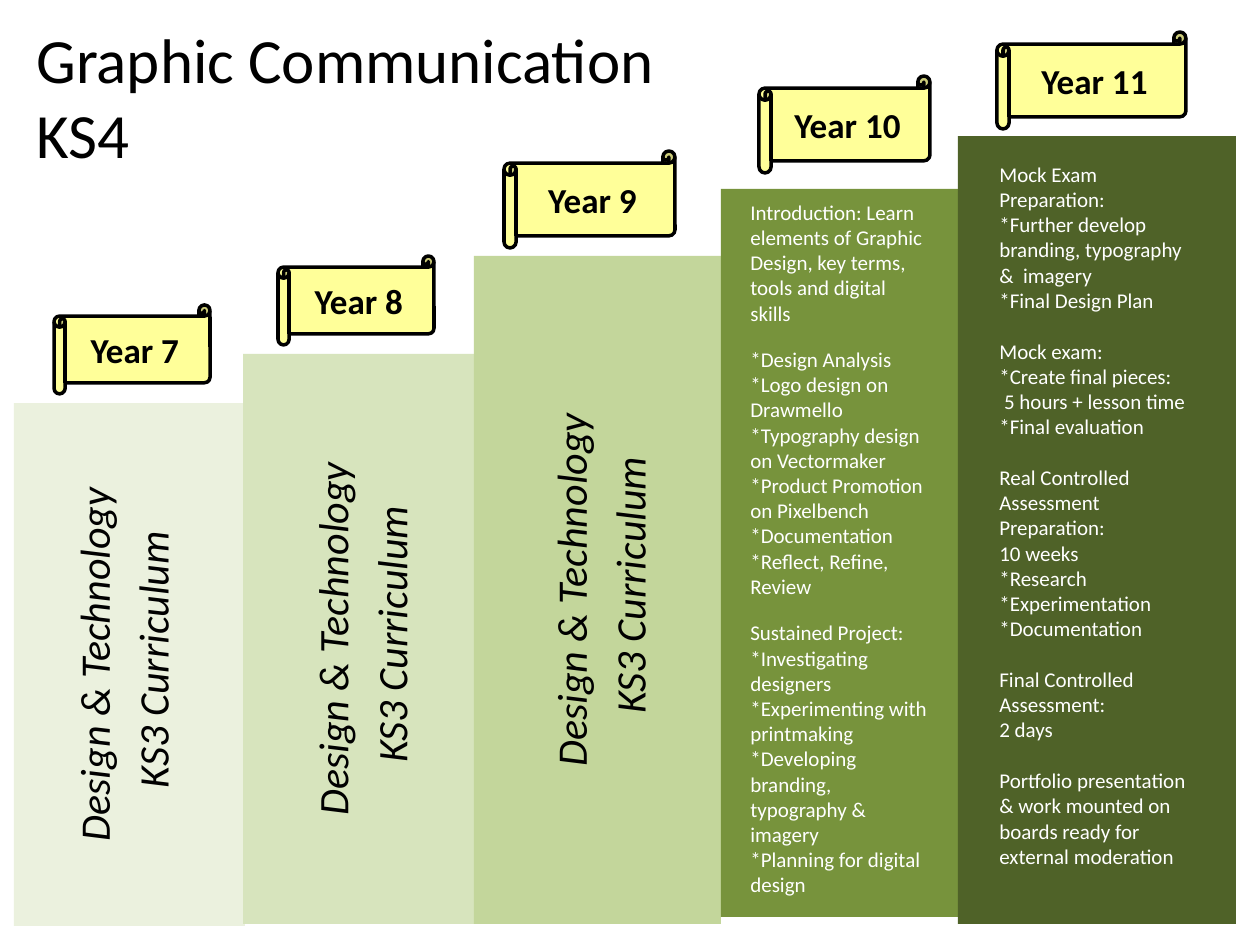
from pptx import Presentation
from pptx.dml.color import RGBColor
from pptx.enum.shapes import MSO_SHAPE
from pptx.enum.text import MSO_ANCHOR, MSO_AUTO_SIZE, PP_ALIGN
from pptx.util import Emu, Pt

RECTANGLE = MSO_SHAPE.RECTANGLE
SCROLL = MSO_SHAPE.HORIZONTAL_SCROLL
MIDDLE = MSO_ANCHOR.MIDDLE
FIT_SHAPE = MSO_AUTO_SIZE.SHAPE_TO_FIT_TEXT
LEFT, CENTER = PP_ALIGN.LEFT, PP_ALIGN.CENTER

PX_PER_INCH = 126
FONT = "Calibri"
COLORS = {
    "black": "000000",
    "white": "FFFFFF",
    "scroll": "FFFF99",
    "year 7": "EBF1DE",
    "year 8": "D7E4BD",
    "year 9": "C3D69B",
    "year 10": "77933C",
    "year 11": "4F6228",
}

KS3_LINES = ["Design & Technology", " KS3 Curriculum"]

YEAR_10_GROUPS = [
    ["Introduction: Learn elements of Graphic Design, key terms, tools and digital skills"],
    [
        "*Design Analysis",
        "*Logo design on Drawmello",
        "*Typography design on Vectormaker",
        "*Product Promotion on Pixelbench",
        "*Documentation",
        "*Reflect, Refine, Review",
    ],
    [
        "Sustained Project:",
        "*Investigating designers",
        "*Experimenting with printmaking",
        "*Developing branding, typography & imagery",
        "*Planning for digital design",
    ],
]

YEAR_11_GROUPS = [
    [
        "Mock Exam Preparation:",
        "*Further develop branding, typography &  imagery",
        "*Final Design Plan",
    ],
    [
        "Mock exam:",
        "*Create final pieces:",
        " 5 hours + lesson time",
        "*Final evaluation",
    ],
    [
        "Real Controlled Assessment Preparation:",
        "10 weeks",
        "*Research",
        "*Experimentation",
        "*Documentation",
    ],
    ["Final Controlled Assessment:", "2 days"],
    ["Portfolio presentation & work mounted on boards ready for external moderation"],
]

KS3_STEPS = [
    ("Year 7", (14, 403, 231, 523), (40, -98, 156, 89), (0, 14)),
    ("Year 8", (243, 354, 232, 570), (35, -98, 156, 89), (4, 0)),
    ("Year 9", (474, 256, 247, 668), (30, -105, 171, 97), (4, 0)),
]
KS4_STEPS = [
    ("Year 10", (721, 189, 247, 728), (38, -113, 171, 97),
     YEAR_10_GROUPS, (17, 4, 203, 790), 12.2),
    ("Year 11", (958, 136, 278, 788), (39, -104, 189, 97),
     YEAR_11_GROUPS, (29, 19, 215, 726), 14.65),
]


def px(length):
    return Emu(round(length * 914400 / PX_PER_INCH))


def color(name):
    return RGBColor.from_string(COLORS[name])


def place(box, part):
    return box[0] + part[0], box[1] + part[1], part[2], part[3]


def add_block(page, kind, box, fill):
    block = page.shapes.add_shape(kind, *map(px, box))
    block.shadow.inherit = False
    block.fill.solid()
    block.fill.fore_color.rgb = color(fill)
    block.line.fill.background()
    return block


def add_para(frame, text, size, ink="black", align=LEFT, gap=0, bold=False, italic=False):
    first = frame.paragraphs[0]
    para = first if not first.runs else frame.add_paragraph()
    para.alignment = align
    para.space_before = Pt(gap)
    span = para.add_run()
    span.text = text
    span.font.name = FONT
    span.font.size = Pt(size)
    span.font.bold = bold
    span.font.italic = italic
    span.font.color.rgb = color(ink)


def add_text_frame(page, box):
    frame = page.shapes.add_textbox(*map(px, box)).text_frame
    frame.word_wrap = True
    frame.auto_size = FIT_SHAPE
    return frame


def add_title(page, box):
    add_para(add_text_frame(page, box), "Graphic Communication KS4", 36)


def add_scroll(page, box, year):
    scroll = add_block(page, SCROLL, box, "scroll")
    scroll.line.color.rgb = color("black")
    scroll.line.width = Pt(2)
    scroll.text_frame.vertical_anchor = MIDDLE
    add_para(scroll.text_frame, year, 20, align=CENTER, bold=True)


def add_ks3_step(page, year, box, scroll, margins):
    frame = add_block(page, RECTANGLE, box, year.lower()).text_frame
    frame._txBody.bodyPr.set("vert", "vert270")
    frame.vertical_anchor = MIDDLE
    frame.margin_left, frame.margin_right = map(px, margins)
    for index, line in enumerate(KS3_LINES):
        add_para(frame, line, 24, align=CENTER, gap=4.8 * index, italic=True)
    add_scroll(page, place(box, scroll), year)


def add_ks4_step(page, year, box, scroll, groups, text, group_gap):
    add_block(page, RECTANGLE, box, year.lower())
    add_scroll(page, place(box, scroll), year)
    frame = add_text_frame(page, place(box, text))
    for group_index, group in enumerate(groups):
        for line_index, line in enumerate(group):
            starts_group = group_index > 0 and line_index == 0
            add_para(frame, line, 12, "white", gap=group_gap if starts_group else 0)


def main():
    deck = Presentation()
    deck.slide_width, deck.slide_height = px(1260), px(945)
    page = deck.slides.add_slide(deck.slide_layouts[6])
    add_title(page, (24, 14, 697, 165))
    for step in KS3_STEPS:
        add_ks3_step(page, *step)
    for step in KS4_STEPS:
        add_ks4_step(page, *step)
    deck.save("out.pptx")


if __name__ == "__main__":
    main()
